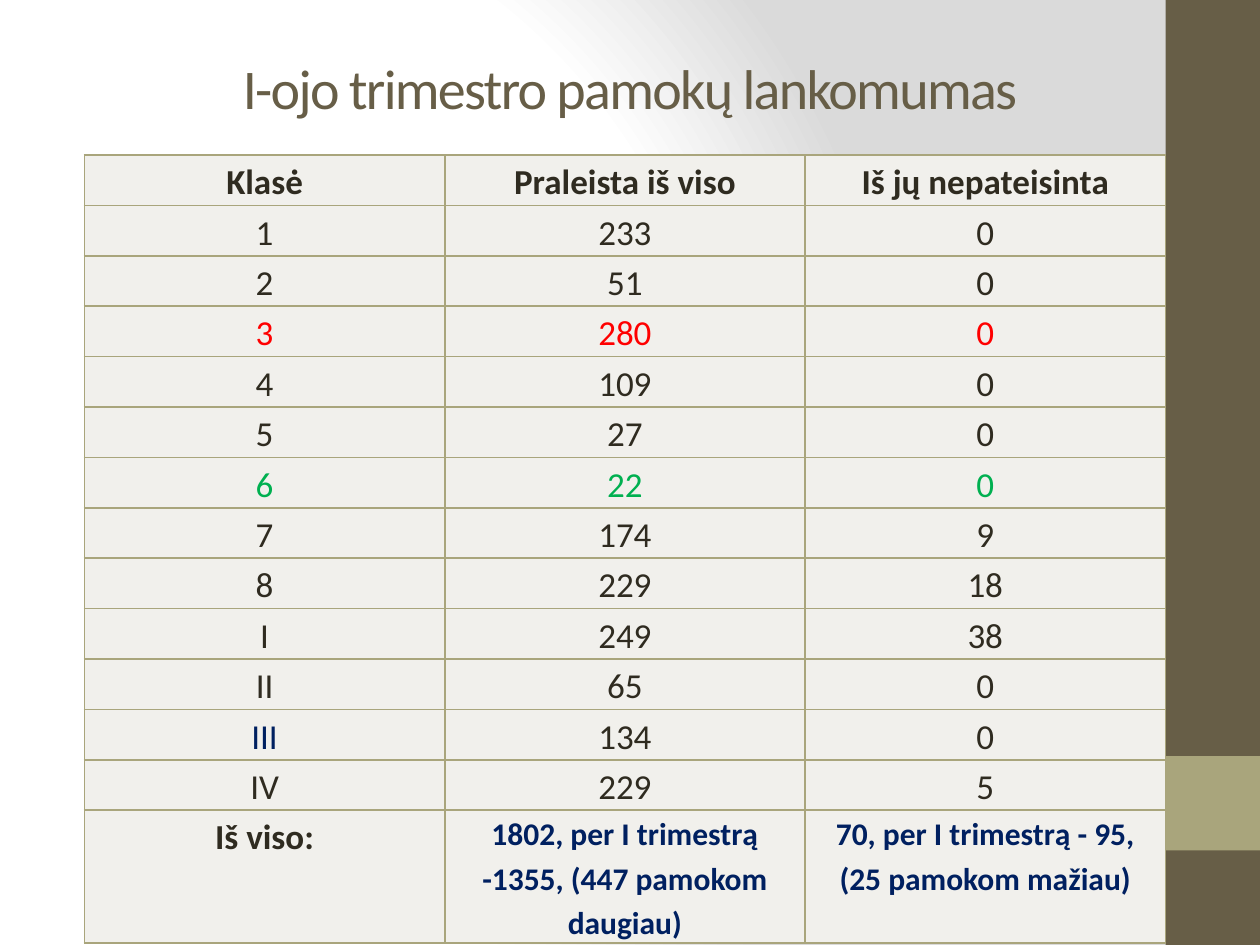
"""Build the slide with the lesson attendance table of the first trimester."""
from dataclasses import dataclass

from pptx import Presentation
from pptx.dml.color import RGBColor as Rgb
from pptx.enum.shapes import MSO_SHAPE as Shape
from pptx.enum.text import MSO_ANCHOR as Anchor, PP_ALIGN as Align
from pptx.oxml import parse_xml
from pptx.oxml.ns import nsdecls
from pptx.util import Inches, Pt


@dataclass(frozen=True)
class Theme:
    font: str = "Calibri"
    brown: str = "675E47"
    olive: str = "A9A57C"
    ink: str = "2F2B20"
    cell: str = "F1F0EC"
    red: str = "FF0000"
    green: str = "00B050"
    navy: str = "002060"
    white: str = "FFFFFF"
    grey: str = "DADADA"
    title_size: int = 32
    body_size: int = 20
    total_size: int = 18


THEME = Theme()


@dataclass(frozen=True)
class Band:
    top: float
    height: float
    color: str


@dataclass(frozen=True)
class Entry:
    text: str
    color: str = THEME.ink
    size: int = THEME.body_size
    bold: bool = False


def style_span(span, size: int, color: str, bold: bool = False) -> None:
    """Format one run of text."""
    span.font.name = THEME.font
    span.font.size = Pt(size)
    span.font.bold = bold
    span.font.color.rgb = Rgb.from_string(color)


def paint_background(page) -> None:
    """Give the page its radial gradient."""
    stops = ((0, THEME.white), (75, THEME.white), (100, THEME.grey))
    stop_xml = "".join(
        f'<a:gs pos="{place * 1000}"><a:srgbClr val="{color}"/></a:gs>'
        for place, color in stops
    )
    page.element.cSld.insert(0, parse_xml(
        f'<p:bg {nsdecls("p", "a")}><p:bgPr><a:gradFill rotWithShape="1">'
        f'<a:gsLst>{stop_xml}</a:gsLst><a:path path="circle">'
        '<a:fillToRect l="20000" t="50000" r="100000" b="50000"/></a:path>'
        '</a:gradFill><a:effectLst/></p:bgPr></p:bg>'
    ))


def draw_band(page, band: Band) -> None:
    """Draw one block of the right-hand stripe."""
    box = page.shapes.add_shape(
        Shape.RECTANGLE, Inches(9.25), Inches(band.top), Inches(0.75), Inches(band.height)
    )
    box.shadow.inherit = False
    box.fill.solid()
    box.fill.fore_color.rgb = Rgb.from_string(band.color)
    box.line.fill.background()


def write_title(page, text: str) -> None:
    """Place and format the title."""
    box = page.shapes.title
    box.left, box.top, box.width, box.height = map(Inches, (0.5, 0.3, 9, 0.78))
    frame = box.text_frame
    frame.text = text
    frame.vertical_anchor = Anchor.MIDDLE
    para = frame.paragraphs[0]
    para.alignment = Align.CENTER
    span = para.runs[0]
    style_span(span, THEME.title_size, THEME.brown)
    span.font._element.set("spc", "-100")


def fill_cell(cell, entry: Entry) -> None:
    """Write one table cell with its fill and borders."""
    cell.margin_left = cell.margin_right = Inches(0.07)
    cell.margin_top = cell.margin_bottom = 0
    cell.text_frame.text = entry.text
    para = cell.text_frame.paragraphs[0]
    para.alignment = Align.CENTER
    para.line_spacing = 1.15
    style_span(para.runs[0], entry.size, entry.color, entry.bold)
    cell.fill.solid()
    cell.fill.fore_color.rgb = Rgb.from_string(THEME.cell)
    properties = cell._tc.get_or_add_tcPr()
    for place, side in enumerate("LRTB"):
        properties.insert(place, parse_xml(
            f'<a:ln{side} {nsdecls("a")} w="{Pt(1)}"><a:solidFill>'
            f'<a:srgbClr val="{THEME.olive}"/></a:solidFill></a:ln{side}>'
        ))


def draw_table(page, rows: list[list[Entry]]) -> None:
    """Draw the attendance table."""
    table = page.shapes.add_table(
        len(rows), len(rows[0]), Inches(0.67), Inches(1.23),
        Inches(8.58), Inches(0.4 * len(rows)),
    ).table
    table.first_row = table.horz_banding = False
    for row_index, entries in enumerate(rows):
        for column_index, entry in enumerate(entries):
            fill_cell(table.cell(row_index, column_index), entry)


BANDS = [Band(0, 7.5, THEME.brown), Band(6, 0.75, THEME.olive)]
HEADINGS = ["Klasė", "Praleista iš viso", "Iš jų nepateisinta"]
ATTENDANCE = [
    ("1", 233, 0), ("2", 51, 0), ("3", 280, 0), ("4", 109, 0),
    ("5", 27, 0), ("6", 22, 0), ("7", 174, 9), ("8", 229, 18),
    ("I", 249, 38), ("II", 65, 0), ("III", 134, 0), ("IV", 229, 5),
]
ROW_COLORS = {"3": THEME.red, "6": THEME.green}
GRADE_COLORS = {"III": THEME.navy}
TOTALS = [
    "1802, per I trimestrą -1355, (447 pamokom daugiau)",
    "70, per I trimestrą - 95, (25 pamokom mažiau)",
]


def attendance_rows() -> list[list[Entry]]:
    """Turn the figures into formatted table rows."""
    rows = [[Entry(text, bold=True) for text in HEADINGS]]
    for grade, *counts in ATTENDANCE:
        color = ROW_COLORS.get(grade, THEME.ink)
        rows.append([Entry(grade, GRADE_COLORS.get(grade, color))]
                    + [Entry(str(count), color) for count in counts])
    rows.append([Entry("Iš viso:", bold=True)]
                + [Entry(text, THEME.navy, THEME.total_size, True) for text in TOTALS])
    return rows


def main() -> None:
    """Build and save the deck."""
    deck = Presentation()
    deck.slide_width, deck.slide_height = Inches(10), Inches(7.5)
    page = deck.slides.add_slide(deck.slide_layouts[5])
    paint_background(page)
    for band in BANDS:
        draw_band(page, band)
    write_title(page, "I-ojo trimestro pamokų lankomumas")
    draw_table(page, attendance_rows())
    deck.save("out.pptx")


if __name__ == "__main__":
    main()
